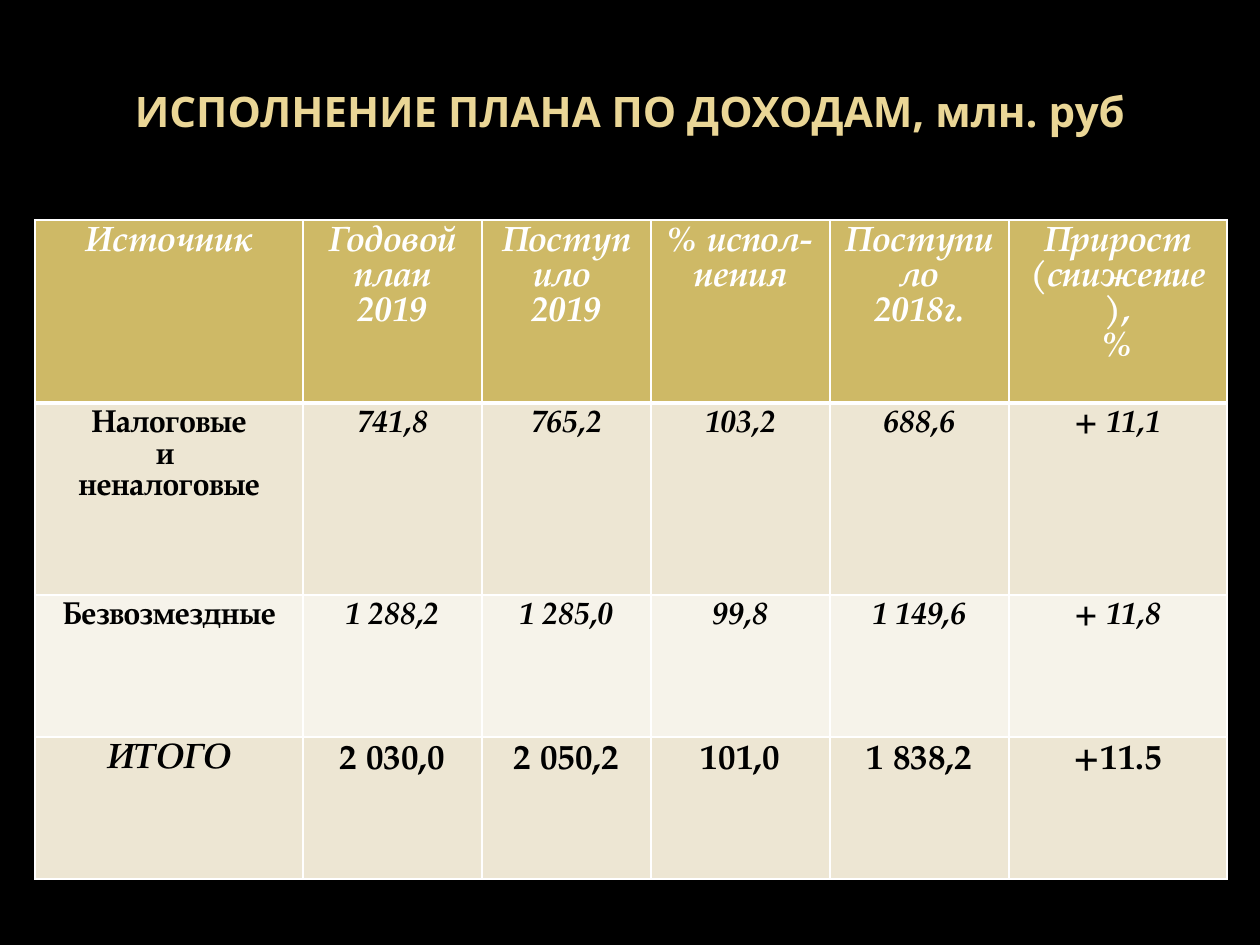
from dataclasses import dataclass

from lxml import etree
from pptx import Presentation
from pptx import util as u
from pptx.dml.color import RGBColor
from pptx.enum import text
from pptx.oxml import ns

PX = 914400 / 126
COLORS = {
    "background": "000000",
    "title": "EAD696",
    "header": "CEB966",
    "band": "EDE6D3",
    "light": "F6F3EA",
    "header_text": "FFFFFF",
    "body_text": "000000",
    "border": "FFFFFF",
}
TITLE_FONT = "Open Sans"
TABLE_FONT = "TeX Gyre Pagella"
COLUMN_WIDTHS = (268, 179, 169, 179, 179, 218)


@dataclass(frozen=True)
class IncomeRow:
    cells: tuple[str, ...]
    height: int
    fill: str
    ink: str
    size: int
    label_italic: bool
    values_italic: bool
    top_border: int = 1
    bottom_border: int = 1


ROWS = (
    IncomeRow(
        ("Источник", "Годовой\nплан 2019", "Поступило \n2019", "% испол-\nнения",
         "Поступило\n2018г.", "Прирост (снижение),\n%"),
        183, "header", "header_text", 20, True, True, bottom_border=3),
    IncomeRow(
        ("Налоговые\nи \nненалоговые", "741,8", "765,2", "103,2", "688,6", "+ 11,1"),
        192, "band", "body_text", 18, False, True, top_border=3),
    IncomeRow(
        ("Безвозмездные", "1 288,2", "1 285,0", "99,8", "1 149,6", "+ 11,8"),
        142, "light", "body_text", 18, False, True),
    IncomeRow(
        ("ИТОГО", "2 030,0", "2 050,2", "101,0", "1 838,2", "+11.5"),
        142, "band", "body_text", 20, True, False),
)


def px(length: int) -> u.Emu:
    return u.Emu(round(length * PX))


def color(name: str) -> RGBColor:
    return RGBColor.from_string(COLORS[name])


def style_text(frame, font_name: str, size: int, ink: str, italic: bool) -> None:
    for paragraph in frame.paragraphs:
        paragraph.alignment = text.PP_ALIGN.CENTER
        for run in paragraph.runs:
            run.font.name = font_name
            run.font.size = u.Pt(size)
            run.font.bold = True
            run.font.italic = italic
            run.font.color.rgb = color(ink)


def add_borders(cell, top: int, bottom: int) -> None:
    properties = cell._tc.get_or_add_tcPr()
    for side, width in (("L", 1), ("R", 1), ("T", top), ("B", bottom)):
        line = etree.SubElement(properties, ns.qn(f"a:ln{side}"), w=str(u.Pt(width)))
        solid = etree.SubElement(line, ns.qn("a:solidFill"))
        etree.SubElement(solid, ns.qn("a:srgbClr"), val=COLORS["border"])


def add_title(slide, wording: str) -> None:
    title = slide.shapes.add_textbox(px(63), px(66), px(1134), px(89))
    frame = title.text_frame
    frame.word_wrap = True
    frame.vertical_anchor = text.MSO_ANCHOR.MIDDLE
    frame.text = wording
    style_text(frame, TITLE_FONT, 24, "title", False)


def fill_cell(cell, wording: str, row: IncomeRow, italic: bool) -> None:
    cell.text_frame.text = wording
    style_text(cell.text_frame, TABLE_FONT, row.size, row.ink, italic)
    for paragraph in cell.text_frame.paragraphs:
        paragraph.line_spacing = u.Pt(row.size)
    add_borders(cell, row.top_border, row.bottom_border)
    cell.fill.solid()
    cell.fill.fore_color.rgb = color(row.fill)


def add_income_table(slide, rows: tuple[IncomeRow, ...]) -> None:
    income = slide.shapes.add_table(
        len(rows), len(COLUMN_WIDTHS), px(35), px(220),
        px(sum(COLUMN_WIDTHS)), px(sum(row.height for row in rows))).table
    for column, width in zip(income.columns, COLUMN_WIDTHS):
        column.width = px(width)
    for r, row in enumerate(rows):
        income.rows[r].height = px(row.height)
        for c, wording in enumerate(row.cells):
            italic = row.values_italic if c else row.label_italic
            fill_cell(income.cell(r, c), wording, row, italic)


def main() -> None:
    deck = Presentation()
    deck.slide_width, deck.slide_height = px(1260), px(945)
    slide = deck.slides.add_slide(deck.slide_layouts[6])
    slide.background.fill.solid()
    slide.background.fill.fore_color.rgb = color("background")
    add_title(slide, "ИСПОЛНЕНИЕ ПЛАНА ПО ДОХОДАМ, млн. руб")
    add_income_table(slide, ROWS)
    deck.save("out.pptx")


if __name__ == "__main__":
    main()
